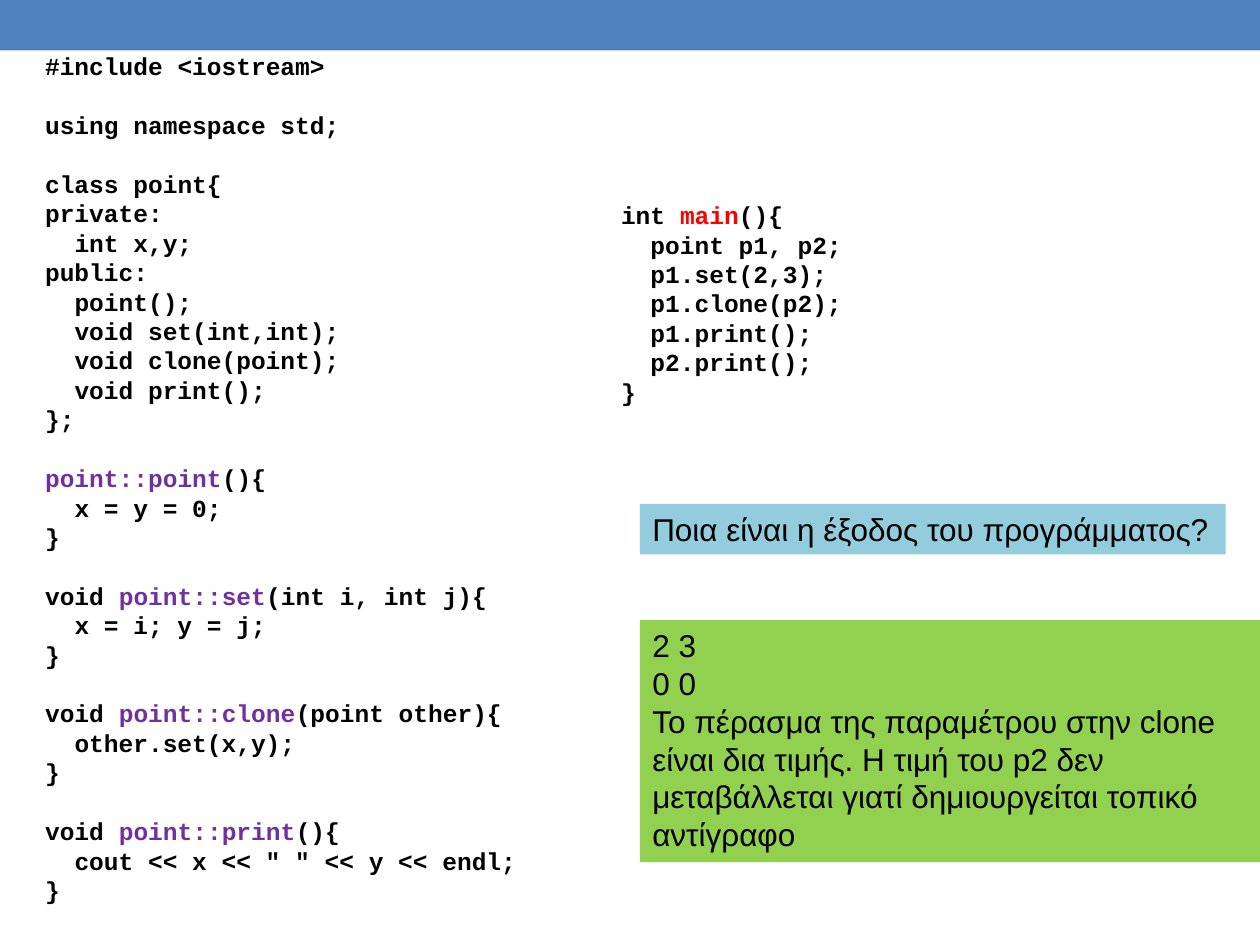
from dataclasses import dataclass

from pptx import Presentation
from pptx import util as u
from pptx.dml.color import RGBColor
from pptx.enum import shapes, text

COLORS = {
    "bar": "4F81BD",
    "text": "000000",
    "method": "7030A0",
    "main": "FF0000",
    "question": "93CDDD",
    "answer": "92D050",
}
LINE_RATIO = 1.2
MARK = "|"

CLASS_CODE = """#include <iostream>

using namespace std;

class point{
private:
  int x,y;
public:
  point();
  void set(int,int);
  void clone(point);
  void print();
};

|point::point|(){
  x = y = 0;
}

void |point::set|(int i, int j){
  x = i; y = j;
}

void |point::clone|(point other){
  other.set(x,y);
}

void |point::print|(){
  cout << x << " " << y << endl;
}"""

MAIN_CODE = """int |main|(){
  point p1, p2;
  p1.set(2,3);
  p1.clone(p2);
  p1.print();
  p2.print();
}"""

QUESTION = "Ποια είναι η έξοδος του προγράμματος?"
ANSWER = """2 3
0 0
Το πέρασμα της παραμέτρου στην clone είναι δια τιμής. \
Η τιμή του p2 δεν μεταβάλλεται γιατί δημιουργείται τοπικό αντίγραφο"""


@dataclass
class Box:
    left: float
    top: float
    width: float
    height: float
    content: str
    font: str = "Arial"
    size: int = 18
    bold: bool = False
    wrap: bool = True
    fill: str = ""
    accent: str = "text"


BOXES = [
    Box(0.66, 0.91, 12.7, 18.14, CLASS_CODE, "Courier New", 14, True, accent="method"),
    Box(12.27, 3.91, 12.7, 4.45, MAIN_CODE, "Courier New", 14, True, accent="main"),
    Box(12.9, 10.16, 11.81, 1.02, QUESTION, wrap=False, fill="question"),
    Box(12.9, 12.5, 12.5, 4.88, ANSWER, fill="answer"),
]


def rgb(name: str) -> RGBColor:
    return RGBColor.from_string(COLORS[name])


def add_rect(s, left: float, top: float, width: float, height: float, fill: str):
    sp = s.shapes.add_shape(shapes.MSO_SHAPE.RECTANGLE, *map(u.Cm, (left, top, width, height)))
    sp.shadow.inherit = False
    sp.fill.solid()
    sp.fill.fore_color.rgb = rgb(fill)
    sp.line.fill.background()
    return sp


def add_line(p, line: str, box: Box, after_gap: bool) -> None:
    pitch = u.Pt(box.size * LINE_RATIO)
    body = line.lstrip()
    p.alignment = text.PP_ALIGN.LEFT
    p.line_spacing = pitch
    p.space_before = pitch if after_gap else u.Pt(0)
    p.font.name, p.font.size, p.font.bold = box.font, u.Pt(box.size), box.bold
    if body != line:
        indent = u.Pt(box.size * 0.6 * (len(line) - len(body)))
        pPr = p._p.get_or_add_pPr()
        pPr.set("marL", str(int(indent)))
        pPr.set("indent", "0")
    for i, part in enumerate(body.split(MARK)):
        if part:
            r = p.add_run()
            r.text = part
            r.font.color.rgb = rgb(box.accent if i % 2 else "text")


def add_box(s, box: Box) -> None:
    place = (box.left, box.top, box.width, box.height)
    if box.fill:
        sp = add_rect(s, *place, box.fill)
    else:
        sp = s.shapes.add_textbox(*map(u.Cm, place))
    tf = sp.text_frame
    tf.word_wrap = box.wrap
    tf.auto_size = text.MSO_AUTO_SIZE.SHAPE_TO_FIT_TEXT
    tf.vertical_anchor = text.MSO_ANCHOR.TOP
    first = True
    for block in box.content.split("\n\n"):
        for n, line in enumerate(block.split("\n")):
            p = tf.paragraphs[0] if first else tf.add_paragraph()
            add_line(p, line, box, after_gap=n == 0 and not first)
            first = False


def main() -> None:
    prs = Presentation()
    prs.slide_width, prs.slide_height = u.Cm(25.4), u.Cm(19.05)
    s = prs.slides.add_slide(prs.slide_layouts[6])
    add_rect(s, 0, 0, 25.4, 1.02, "bar")
    for box in BOXES:
        add_box(s, box)
    prs.save("out.pptx")


if __name__ == "__main__":
    main()
